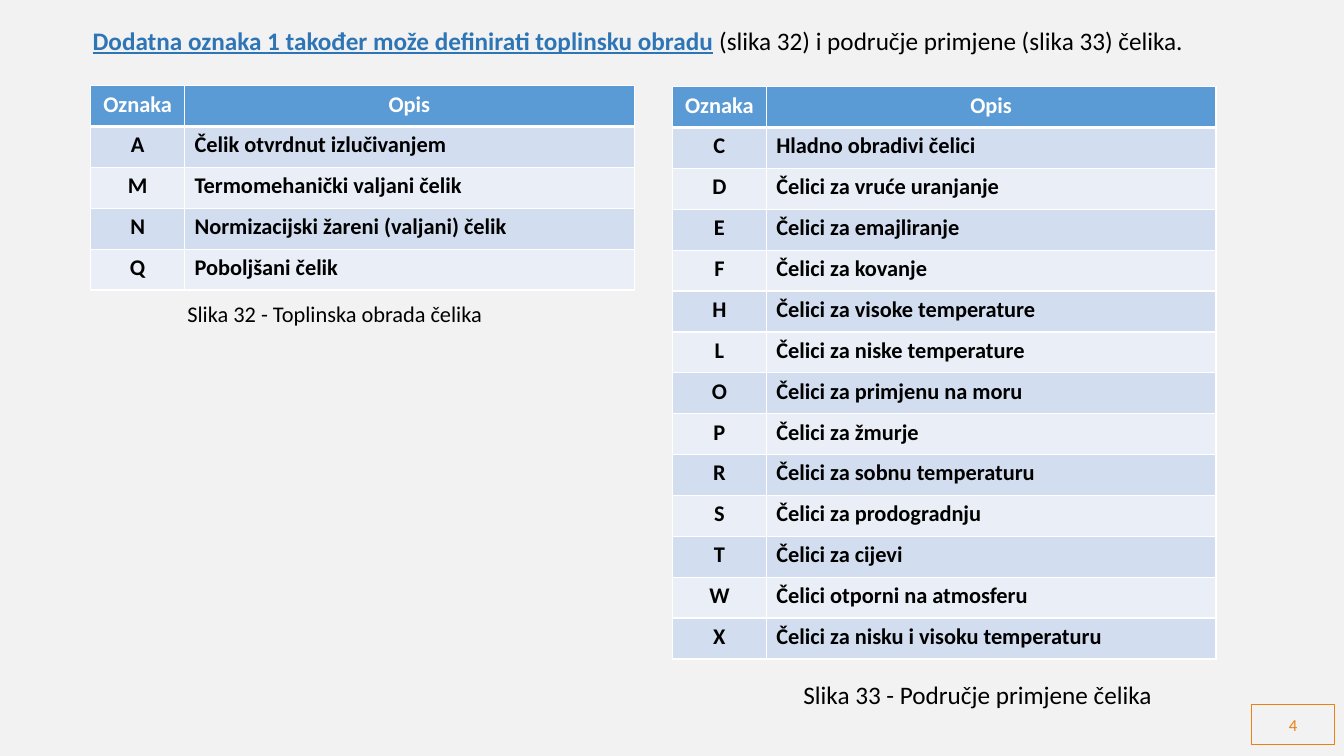
import pptx
import pptx.dml.color
import pptx.enum.shapes
import pptx.enum.text
import pptx.util
from lxml import etree
from pptx.util import Inches

FONT = "Calibri"
BLACK, WHITE, ORANGE, LINK_BLUE = "000000", "FFFFFF", "EB8113", "2E75B6"
HEADER_FILL, BAND_FILLS = "5B9BD5", ("D2DEEF", "EAEFF7")
COLUMN_WIDTHS = (0.93, 4.46)
ROW_HEIGHT = 5.68 / 14
CENTER = pptx.enum.text.PP_ALIGN.CENTER
LEFT = pptx.enum.text.PP_ALIGN.LEFT
A = "{http://schemas.openxmlformats.org/drawingml/2006/main}"

HEAT_TREATMENT = [
    ("A", "Čelik otvrdnut izlučivanjem"),
    ("M", "Termomehanički valjani čelik"),
    ("N", "Normizacijski žareni (valjani) čelik"),
    ("Q", "Poboljšani čelik"),
]
APPLICATIONS = [
    ("C", "Hladno obradivi čelici"),
    ("D", "Čelici za vruće uranjanje"),
    ("E", "Čelici za emajliranje"),
    ("F", "Čelici za kovanje"),
    ("H", "Čelici za visoke temperature"),
    ("L", "Čelici za niske temperature"),
    ("O", "Čelici za primjenu na moru"),
    ("P", "Čelici za žmurje"),
    ("R", "Čelici za sobnu temperaturu"),
    ("S", "Čelici za prodogradnju"),
    ("T", "Čelici za cijevi"),
    ("W", "Čelici otporni na atmosferu"),
    ("X", "Čelici za nisku i visoku temperaturu"),
]


def rgb(color):
    return pptx.dml.color.RGBColor.from_string(color)


def add_run(p, text, size, color=BLACK, **extra):
    r = p.add_run()
    r.text = text
    values = {"name": FONT, "size": pptx.util.Pt(size), "bold": False, **extra}
    for key, value in values.items():
        setattr(r.font, key, value)
    r.font.color.rgb = rgb(color)


def add_text(slide, box, runs, wrap=False):
    """Each run is (text, size, color, extra font values)."""
    sp = slide.shapes.add_textbox(*map(Inches, box))
    tf = sp.text_frame
    tf.word_wrap = wrap
    tf.auto_size = pptx.enum.text.MSO_AUTO_SIZE.SHAPE_TO_FIT_TEXT
    for text, size, color, extra in runs:
        add_run(tf.paragraphs[0], text, size, color, **extra)


def add_borders(cell, **widths):
    tc_pr = cell._tc.get_or_add_tcPr()
    for side in "LRTB":
        width = pptx.util.Pt(widths.get(side, 1))
        ln = etree.SubElement(tc_pr, f"{A}ln{side}", w=str(width))
        fill = etree.SubElement(ln, f"{A}solidFill")
        etree.SubElement(fill, f"{A}srgbClr", val=WHITE)


def add_steel_table(slide, left, top, entries):
    rows = [("Oznaka", "Opis"), *entries]
    frame = slide.shapes.add_table(
        len(rows), len(COLUMN_WIDTHS), Inches(left), Inches(top),
        Inches(sum(COLUMN_WIDTHS)), Inches(ROW_HEIGHT * len(rows)))
    table = frame.table
    for column, width in zip(table.columns, COLUMN_WIDTHS):
        column.width = Inches(width)
    for i, row in enumerate(rows):
        table.rows[i].height = Inches(ROW_HEIGHT)
        header = i == 0
        for j, text in enumerate(row):
            cell = table.cell(i, j)
            # The rule under the header is thicker than the others
            add_borders(cell, B=3 if header else 1, T=3 if i == 1 else 1)
            cell.fill.solid()
            cell.fill.fore_color.rgb = rgb(
                HEADER_FILL if header else BAND_FILLS[(i - 1) % 2])
            p = cell.text_frame.paragraphs[0]
            p.alignment = CENTER if header or j == 0 else LEFT
            add_run(p, text, 16, WHITE if header else BLACK, bold=True)


def add_page_number(slide, box, number):
    sp = slide.shapes.add_shape(
        pptx.enum.shapes.MSO_SHAPE.RECTANGLE, *map(Inches, box))
    sp.shadow.inherit = False
    sp.fill.background()
    sp.line.color.rgb = rgb(ORANGE)
    sp.line.width = pptx.util.Pt(0.75)
    tf = sp.text_frame
    tf.vertical_anchor = pptx.enum.text.MSO_ANCHOR.MIDDLE
    p = tf.paragraphs[0]
    p.alignment = CENTER
    add_run(p, number, 12, ORANGE)


def main():
    prs = pptx.Presentation()
    prs.slide_width, prs.slide_height = Inches(13.33), Inches(7.5)
    slide = prs.slides.add_slide(prs.slide_layouts[6])
    slide.background.fill.solid()
    slide.background.fill.fore_color.rgb = rgb("F2F2F2")

    # Page number and heading
    add_page_number(slide, (12.41, 6.99, 0.83, 0.4), "4")
    add_text(slide, (0.82, 0.2, 12.51, 0.4), [
        ("Dodatna oznaka 1 također može definirati toplinsku obradu", 18,
         LINK_BLUE, {"bold": True, "underline": True}),
        (" (slika 32) i područje primjene (slika 33) čelika.", 18, BLACK, {}),
    ], wrap=True)

    # Heat treatment
    add_steel_table(slide, 0.9, 0.85, HEAT_TREATMENT)
    add_text(slide, (1.76, 2.93, 3.15, 0.37),
             [("Slika 32 - Toplinska obrada čelika", 16, BLACK, {})])

    # Fields of application
    add_steel_table(slide, 6.67, 0.86, APPLICATIONS)
    add_text(slide, (7.87, 6.69, 3.7, 0.4),
             [("Slika 33 - Područje primjene čelika", 18, BLACK, {})])

    prs.save("out.pptx")


if __name__ == "__main__":
    main()
